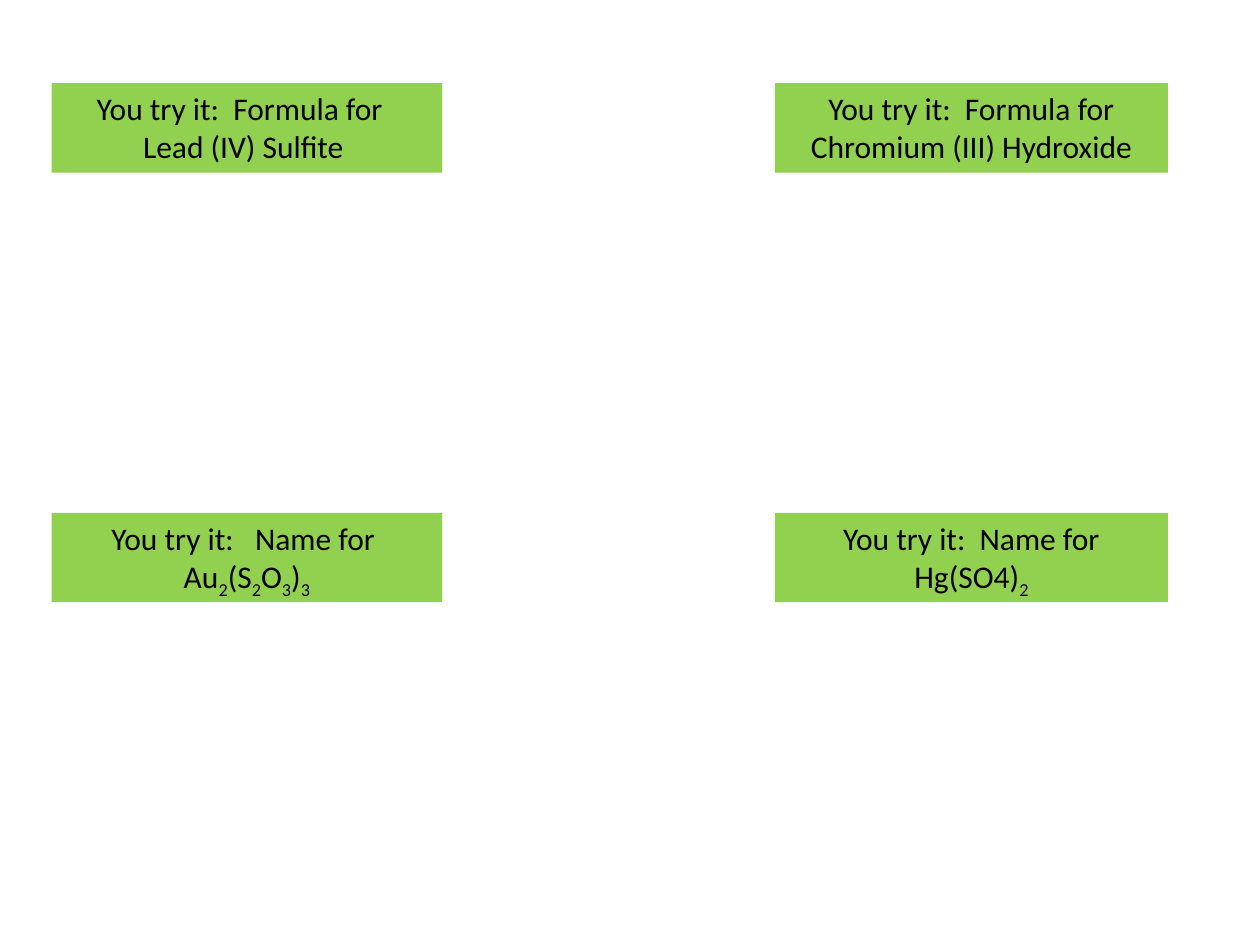
from dataclasses import dataclass

from pptx import Presentation
from pptx.dml.color import RGBColor
from pptx.enum import text
from pptx.util import Inches, Pt


@dataclass(frozen=True)
class Theme:
    font: str = "Calibri"
    size: int = 18
    ink: RGBColor = RGBColor(0x00, 0x00, 0x00)
    prompt_fill: RGBColor = RGBColor(0x92, 0xD0, 0x50)


THEME = Theme()
COLUMNS = ((0.41, 3.1), (6.15, 3.12))
ROW_TOPS = (0.66, 4.07)
PROMPT_HEIGHT = 0.71
SUBSCRIPT_MARK = "_"
PROMPTS = (
    (
        ("You try it:  Formula for  ", "Lead (IV) Sulfite "),
        ("You try it:  Formula for Chromium (III) Hydroxide",),
    ),
    (
        ("You try it:   Name for ", "Au_2_(S_2_O_3_)_3"),
        ("You try it:  Name for", "Hg(SO4)_2"),
    ),
)


def add_formula_runs(paragraph, line):
    for index, piece in enumerate(line.split(SUBSCRIPT_MARK)):
        run = paragraph.add_run()
        run.text = piece
        run.font.name = THEME.font
        run.font.size = Pt(THEME.size)
        run.font.color.rgb = THEME.ink
        if index % 2:
            run.font._element.set("baseline", "-25000")


def add_prompt(slide, left, top, width, lines):
    shape = slide.shapes.add_textbox(
        Inches(left), Inches(top), Inches(width), Inches(PROMPT_HEIGHT)
    )
    shape.fill.solid()
    shape.fill.fore_color.rgb = THEME.prompt_fill
    text_frame = shape.text_frame
    text_frame.word_wrap = True
    text_frame.auto_size = text.MSO_AUTO_SIZE.SHAPE_TO_FIT_TEXT
    text_frame.text = "\n" * (len(lines) - 1)
    for paragraph, line in zip(text_frame.paragraphs, lines):
        paragraph.alignment = text.PP_ALIGN.CENTER
        add_formula_runs(paragraph, line)


def main():
    presentation = Presentation()
    presentation.slide_width = Inches(10)
    presentation.slide_height = Inches(7.5)
    slide = presentation.slides.add_slide(presentation.slide_layouts[6])
    for top, row in zip(ROW_TOPS, PROMPTS):
        for (left, width), lines in zip(COLUMNS, row):
            add_prompt(slide, left, top, width, lines)
    presentation.save("out.pptx")


if __name__ == "__main__":
    main()
